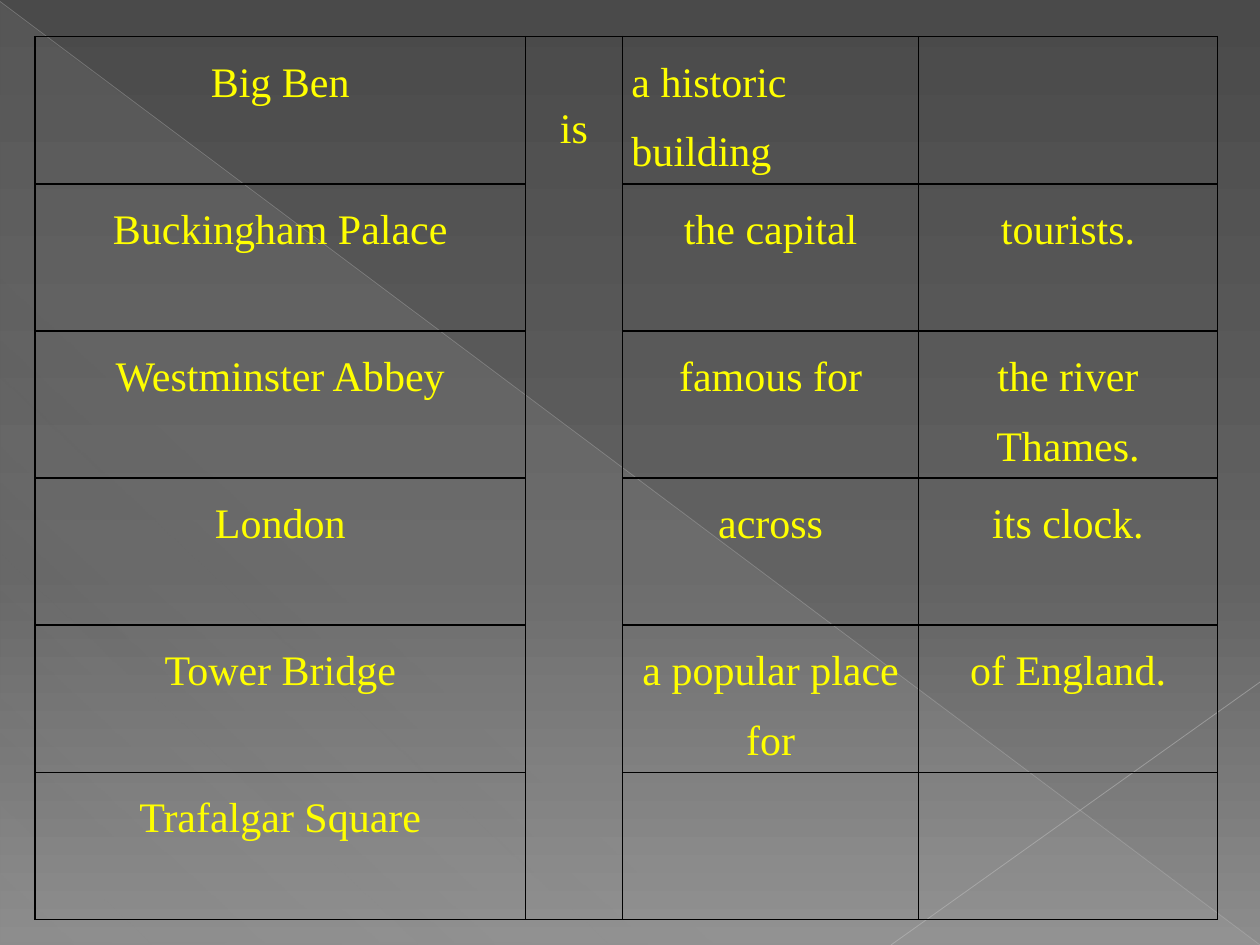
from lxml.etree import SubElement
from pptx import Presentation
from pptx.dml.color import RGBColor
from pptx.enum.shapes import MSO_CONNECTOR as CONN, MSO_SHAPE as SHAPE
from pptx.enum.text import PP_ALIGN as ALIGN
from pptx.oxml.ns import qn
from pptx.util import Cm, Pt

WIDTH, HEIGHT = 25.4, 19.05
COLUMNS = [9.88, 1.96, 5.97, 6.02]
VERB_COLUMN = 1
ROWS = [
    ["Big Ben", "is", "a historic building", ""],
    ["Buckingham Palace", "", "the capital", "tourists."],
    ["Westminster Abbey", "", "famous for", "the river Thames."],
    ["London", "", "across", "its clock."],
    ["Tower Bridge", "", "a popular place for", "of England."],
    ["Trafalgar Square", "", "", ""],
]


def color(value):
    """Turn a hex string into a colour."""
    return RGBColor.from_string(value)


def add_color(parent, value, alpha=100):
    """Append a colour with an opacity in percent."""
    clr = SubElement(parent, qn("a:srgbClr"), val=str(color(value)))
    if alpha < 100:
        SubElement(clr, qn("a:alpha"), val=str(alpha * 1000))


def set_gradient(fill, element, stops, angle):
    """Fill with (position, colour, opacity) stops at a clockwise angle."""
    fill.gradient()
    stop_list = element.find(".//" + qn("a:gsLst"))
    for stop in list(stop_list):
        stop_list.remove(stop)
    for position, value, alpha in stops:
        stop = SubElement(stop_list, qn("a:gs"), pos=str(position * 1000))
        add_color(stop, value, alpha)
    element.find(".//" + qn("a:lin")).set("ang", str(angle * 60000))


def add_line(slide, start, end, value, width, alpha):
    """Draw a translucent straight line between two points."""
    line = slide.shapes.add_connector(CONN.STRAIGHT, *map(Cm, start + end))
    line.line.width = Pt(width)
    line.line.fill.solid()
    ln = line.element.spPr.find(qn("a:ln"))
    fill = ln.find(qn("a:solidFill"))
    for child in list(fill):
        fill.remove(child)
    add_color(fill, value, alpha)
    SubElement(line.element.spPr, qn("a:effectLst"))


def add_backdrop(slide, left, top, width, height):
    """Shade the slide and lay the diagonal decoration over it."""
    set_gradient(slide.background.fill, slide.element,
                 [(0, "4A4A4A", 100), (60, "626262", 100), (100, "8C8C8C", 100)], 90)
    sp = slide.shapes.add_shape(SHAPE.RIGHT_TRIANGLE, Cm(left), Cm(top), Cm(width), Cm(height))
    sp.shadow.inherit = False
    sp.line.fill.background()
    set_gradient(sp.fill, sp.element,
                 [(0, "D2D2D2", 10), (70, "D2D2D2", 8), (100, "D2D2D2", 1)], 133)
    right, bottom = left + width, top + height
    add_line(slide, (left, top), (right, bottom), "BFBFBF", 0.39, 35)
    add_line(slide, (right, top + 13.72), (left + 17.96, bottom), "C6C6C6", 0.47, 45)


def write_text(tf, text, size=24, font="Times New Roman", fill="FFFF00",
               align=ALIGN.CENTER, spacing=1.5):
    """Write one formatted paragraph."""
    p = tf.paragraphs[0]
    p.alignment, p.line_spacing = align, spacing
    r = p.add_run()
    r.text = text
    r.font.size, r.font.name = Pt(size), font
    r.font.color.rgb = color(fill)


def set_borders(cell, value="000000", width=1):
    """Give a cell the same line on all four sides."""
    props = cell._tc.get_or_add_tcPr()
    for index, side in enumerate(("a:lnL", "a:lnR", "a:lnT", "a:lnB")):
        ln = SubElement(props, qn(side), w=str(Pt(width)))
        add_color(SubElement(ln, qn("a:solidFill")), value)
        props.insert(index, ln)


def add_matching_table(slide, left, top, width, height):
    """Place the sentence table, with one verb cell spanning every row."""
    table = slide.shapes.add_table(len(ROWS), len(COLUMNS), Cm(left), Cm(top),
                                   Cm(width), Cm(height)).table
    table.first_row = table.horz_banding = False
    for column, size in zip(table.columns, COLUMNS):
        column.width = Cm(size)
    for row in table.rows:
        row.height = Cm(height / len(ROWS))
    table.cell(0, VERB_COLUMN).merge(table.cell(len(ROWS) - 1, VERB_COLUMN))
    for i, texts in enumerate(ROWS):
        for j, text in enumerate(texts):
            cell = table.cell(i, j)
            cell.fill.background()
            cell.margin_left = cell.margin_right = Cm(0.18)
            cell.margin_top = Cm(0.93 if j == VERB_COLUMN else 0)
            cell.margin_bottom = Cm(0)
            if not cell.is_spanned:
                set_borders(cell)
            if text:
                align = ALIGN.LEFT if (i, j) == (0, 2) else ALIGN.CENTER
                write_text(cell.text_frame, text, align=align)


def main():
    """Build the slide and save it."""
    prs = Presentation()
    prs.slide_width, prs.slide_height = Cm(WIDTH), Cm(HEIGHT)
    slide = prs.slides.add_slide(prs.slide_layouts[6])
    add_backdrop(slide, 0, 0.03, WIDTH, HEIGHT - 0.03)
    add_matching_table(slide, 0.71, 0.74, sum(COLUMNS), 17.8)
    prs.save("out.pptx")


if __name__ == "__main__":
    main()
